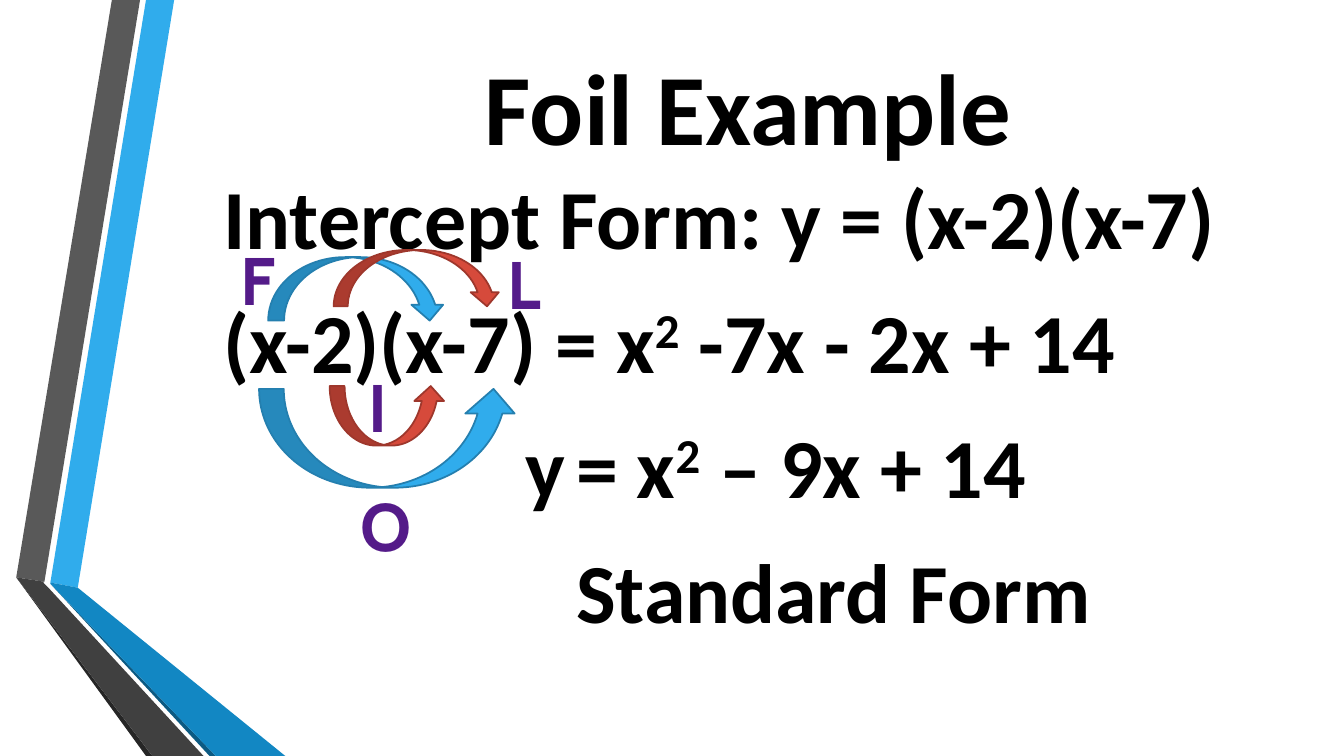
"""Build the FOIL example slide: expanding intercept form into standard form."""
from pptx import Presentation
from pptx.dml.color import RGBColor
from pptx.enum.shapes import MSO_SHAPE
from pptx.enum.text import MSO_AUTO_SIZE, PP_ALIGN
from pptx.util import Cm, Pt

BLACK = RGBColor(0x00, 0x00, 0x00)
PURPLE = RGBColor(0x54, 0x1B, 0x89)
SKY = RGBColor(0x30, 0xAC, 0xEC)
SKY_EDGE = RGBColor(0x24, 0x7F, 0xAF)
RED = RGBColor(0xD6, 0x4A, 0x3B)
RED_EDGE = RGBColor(0x9E, 0x37, 0x2C)
GRAY = RGBColor(0x59, 0x59, 0x59)
CHARCOAL = RGBColor(0x40, 0x40, 0x40)
INK = RGBColor(0x26, 0x26, 0x26)
NAVY = RGBColor(0x0C, 0x5A, 0x82)
BLUE = RGBColor(0x12, 0x87, 0xC3)

SLIDE_SIZE = (33.87, 19.05)
RIBBONS = [
    (SKY, [(1.27, 14.68), (1.96, 14.81), (4.39, 0), (3.68, 0)]),
    (GRAY, [(3.53, 0), (2.82, 0), (0.41, 14.55), (1.12, 14.66)]),
    (INK, [(0.41, 14.55), (3.68, 19.05), (3.84, 19.05)]),
    (NAVY, [(1.27, 14.71), (5.28, 19.05), (5.44, 19.05)]),
    (BLUE, [(1.27, 14.71), (5.44, 19.05), (7.19, 19.05), (1.96, 14.81), (1.27, 14.68)]),
    (CHARCOAL, [(5.13, 19.05), (1.22, 14.81), (1.09, 14.68), (1.12, 14.66),
                (0.41, 14.55), (3.84, 19.05)]),
]

TITLE = "Foil Example"
TITLE_BOX = (6.45, 0.99, 24.82, 2.08)
STEPS_BOX = (5.38, 4.04, 26.64, 13.84)
SQUARED = "2"
STEPS = [
    (0, ["Intercept Form: y = (x-2)(x-7)"]),
    (0, ["(x-2)(x-7) = x", SQUARED, " -7x - 2x + 14"]),
    (7.62, ["y\t= x", SQUARED, " – 9x + 14"]),
    (8.89, ["Standard Form"]),
]

OVER, UNDER = MSO_SHAPE.CURVED_DOWN_ARROW, MSO_SHAPE.CURVED_UP_ARROW
PAIRINGS = [
    (OVER, (6.76, 6.48, 4.47, 1.6), SKY, SKY_EDGE),
    (UNDER, (6.53, 9.8, 6.53, 2.49), SKY, SKY_EDGE),
    (OVER, (8.41, 6.3, 4.22, 1.42), RED, RED_EDGE),
    (UNDER, (8.31, 9.73, 2.92, 1.5), RED, RED_EDGE),
]
LETTERS = [
    ("F", (5.82, 5.87, 1.17, 2.31)),
    ("O", (8.84, 12.09, 2.06, 2.31)),
    ("I", (9.04, 9.09, 1.65, 2.31)),
    ("L", (12.55, 5.99, 1.78, 2.31)),
]


def in_cm(lengths):
    return [Cm(length) for length in lengths]


def add_ribbon(slide, color, corners):
    points = [(round(x * 100), round(y * 100)) for x, y in corners]
    builder = slide.shapes.build_freeform(*points[0], scale=Cm(0.01))
    builder.add_line_segments(points[1:], close=True)
    ribbon = builder.convert_to_shape()
    ribbon.shadow.inherit = False
    ribbon.fill.solid()
    ribbon.fill.fore_color.rgb = color
    ribbon.line.fill.background()


def add_pairing(slide, preset, box, color, edge):
    arrow = slide.shapes.add_shape(preset, *in_cm(box))
    arrow.shadow.inherit = False
    arrow.fill.solid()
    arrow.fill.fore_color.rgb = color
    arrow.line.color.rgb = edge
    arrow.line.width = Pt(1.25)


def add_frame(slide, box):
    frame = slide.shapes.add_textbox(*in_cm(box)).text_frame
    frame.word_wrap = True
    return frame


def style(run, size, name, color):
    run.font.size = Pt(size)
    run.font.name = name
    run.font.bold = True
    run.font.color.rgb = color


def add_steps(slide):
    frame = add_frame(slide, STEPS_BOX)
    for number, (indent, pieces) in enumerate(STEPS):
        step = frame.add_paragraph() if number else frame.paragraphs[0]
        step.space_before = Pt(11 if number else 0)
        step.space_after = Pt(6)
        if indent:
            step._p.get_or_add_pPr().set("marL", str(Cm(indent)))
        for piece in pieces:
            run = step.add_run()
            run.text = piece
            style(run, 60, "Calibri", BLACK)
            if piece == SQUARED:
                run._r.get_or_add_rPr().set("baseline", "30000")


def add_title(slide):
    frame = add_frame(slide, TITLE_BOX)
    frame.text = TITLE
    heading = frame.paragraphs[0]
    heading.alignment = PP_ALIGN.CENTER
    style(heading.runs[0], 72, "Calibri", BLACK)


def add_letter(slide, letter, box):
    frame = add_frame(slide, box)
    frame.auto_size = MSO_AUTO_SIZE.SHAPE_TO_FIT_TEXT
    frame.text = letter
    style(frame.paragraphs[0].runs[0], 48, "Cabin", PURPLE)


def main():
    deck = Presentation()
    deck.slide_width, deck.slide_height = in_cm(SLIDE_SIZE)
    slide = deck.slides.add_slide(deck.slide_layouts[6])
    for ribbon in RIBBONS:
        add_ribbon(slide, *ribbon)
    add_steps(slide)
    add_title(slide)
    for pairing in PAIRINGS:
        add_pairing(slide, *pairing)
    for letter in LETTERS:
        add_letter(slide, *letter)
    deck.save("out.pptx")


if __name__ == "__main__":
    main()
